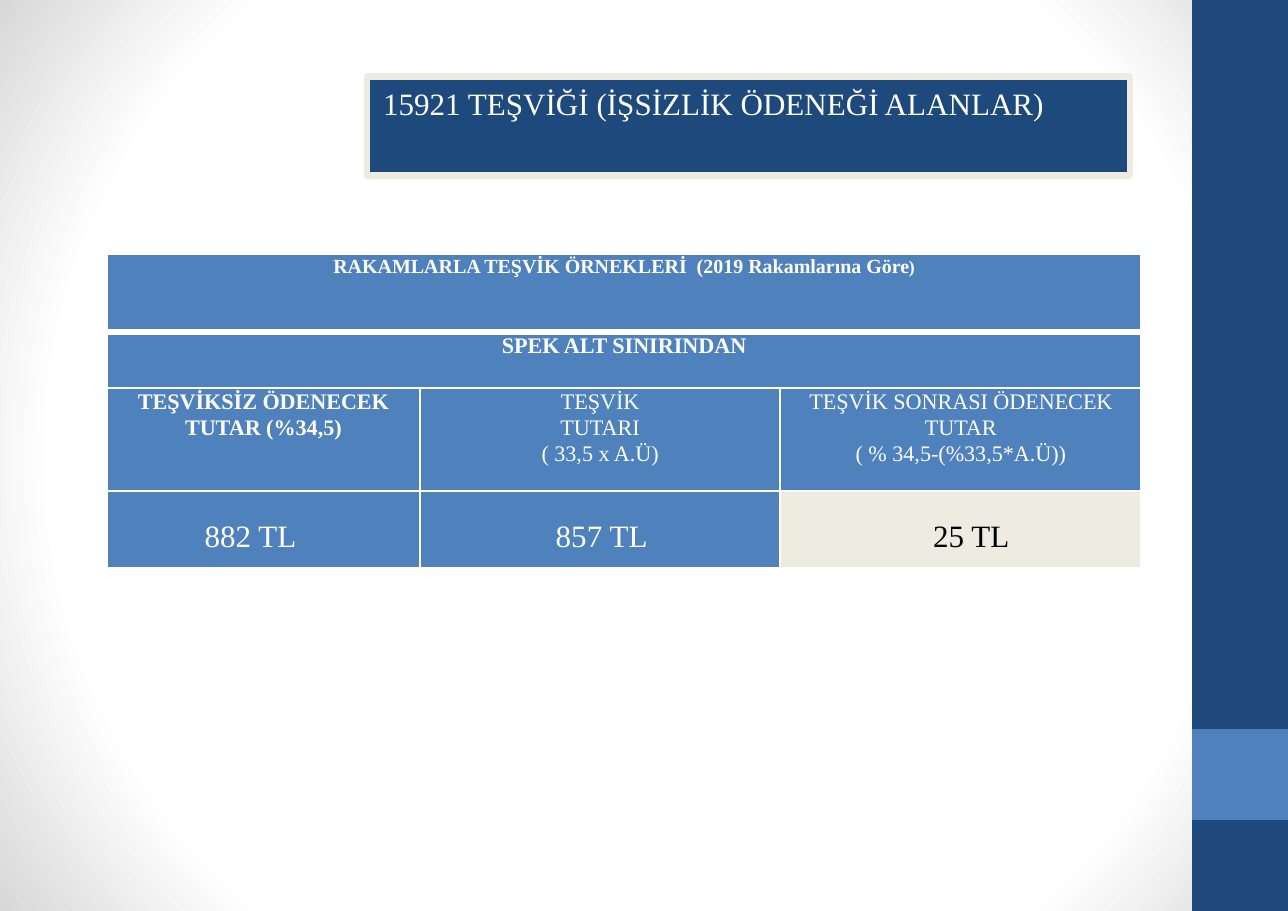
import pptx
import pptx.dml.color
import pptx.enum.shapes
import pptx.enum.text
import pptx.oxml
import pptx.util

Inches = pptx.util.Inches
ALIGN = pptx.enum.text.PP_ALIGN
RECTANGLE = pptx.enum.shapes.MSO_SHAPE.RECTANGLE
DRAWING_NS = 'xmlns:a="http://schemas.openxmlformats.org/drawingml/2006/main"'
NAVY, BLUE, CREAM, WHITE, BLACK = "1F497D", "4F81BD", "EEECE1", "FFFFFF", "000000"


def color(hex_text):
    return pptx.dml.color.RGBColor.from_string(hex_text)


def style_text(frame, size, hex_text, bold=False, align=ALIGN.CENTER, spacing=1.07):
    for para in frame.paragraphs:
        para.alignment = align
        para.line_spacing = spacing
        for span in para.runs:
            span.font.name = "Times New Roman"
            span.font.size = pptx.util.Pt(size)
            span.font.bold = bold
            span.font.color.rgb = color(hex_text)


deck = pptx.Presentation()
deck.slide_width, deck.slide_height = Inches(8.07), Inches(5.71)
page = deck.slides.add_slide(deck.slide_layouts[5])

# Background: white centre fading to grey corners
background = page.background.fill
background.gradient()
gradient = page.background._cSld.bg.bgPr.find(pptx.oxml.ns.qn("a:gradFill"))
for child in list(gradient):
    gradient.remove(child)
stops = "".join(
    f'<a:gs pos="{position * 1000}"><a:srgbClr val="{shade}"/></a:gs>'
    for position, shade in [(0, WHITE), (75, WHITE), (100, "D8D8D8")])
center = "".join(f' {side}="50000"' for side in "ltrb")
for xml in [f"<a:gsLst {DRAWING_NS}>{stops}</a:gsLst>",
            f'<a:path {DRAWING_NS} path="circle"><a:fillToRect{center}/></a:path>']:
    gradient.append(pptx.oxml.parse_xml(xml))

# Side band and its accent
for top, height, shade in [(0, 5.71, NAVY), (4.57, 0.57, BLUE)]:
    band = page.shapes.add_shape(
        RECTANGLE, Inches(7.47), Inches(top), Inches(0.6), Inches(height))
    band.shadow.inherit = False
    band.fill.solid()
    band.fill.fore_color.rgb = color(shade)
    band.line.fill.background()

# Title
title = page.shapes.title
title.left, title.top = Inches(2.3), Inches(0.48)
title.width, title.height = Inches(4.78), Inches(0.62)
title.fill.solid()
title.fill.fore_color.rgb = color("1D497D")
title.line.color.rgb = color("EEECE0")
title.line.width = pptx.util.Pt(3)
title.text_frame.text = "15921 TEŞVİĞİ (İŞSİZLİK ÖDENEĞİ ALANLAR)"
title.text_frame.auto_size = pptx.enum.text.MSO_AUTO_SIZE.NONE
title.text_frame.vertical_anchor = pptx.enum.text.MSO_ANCHOR.TOP
style_text(title.text_frame, 14, WHITE, align=ALIGN.LEFT, spacing=1.0)

# Incentive table: rows of (height, size, texts)
rows = [
    (0.49, 9, ["RAKAMLARLA TEŞVİK ÖRNEKLERİ  (2019 Rakamlarına Göre"]),
    (0.35, 10, ["SPEK ALT SINIRINDAN"]),
    (0.65, 10, ["TEŞVİKSİZ ÖDENECEK TUTAR (%34,5)",
                "TEŞVİK\nTUTARI\n( 33,5 x A.Ü)",
                "TEŞVİK SONRASI ÖDENECEK TUTAR\n( % 34,5-(%33,5*A.Ü))"]),
    (0.48, 10, []),
]
widths = [1.96, 2.26, 2.26]
table = page.shapes.add_table(
    len(rows), len(widths), Inches(0.67), Inches(1.59), Inches(6.48), Inches(1.97)).table
for column, width in zip(table.columns, widths):
    column.width = Inches(width)
for row_index, (height, size, texts) in enumerate(rows):
    table.rows[row_index].height = Inches(height)
    for column_index in range(len(widths)):
        cell = table.cell(row_index, column_index)
        cell.margin_left = cell.margin_right = Inches(0.04)
        cell.margin_top = cell.margin_bottom = 0
        properties = cell._tc.get_or_add_tcPr()
        for side in "LRTB":
            heavy = (row_index, side) in [(0, "B"), (1, "T")]
            properties.append(pptx.oxml.parse_xml(
                f'<a:ln{side} {DRAWING_NS} w="{38100 if heavy else 12700}"><a:solidFill>'
                f'<a:srgbClr val="{WHITE}"/></a:solidFill></a:ln{side}>'))
        cell.fill.solid()
        cell.fill.fore_color.rgb = color(CREAM if (row_index, column_index) == (3, 2) else BLUE)
        if column_index < len(texts):
            cell.text_frame.text = texts[column_index]
            style_text(cell.text_frame, size, WHITE, bold=column_index == 0)
    if len(texts) == 1:
        table.cell(row_index, 0).merge(table.cell(row_index, len(widths) - 1))

# Smaller closing bracket of the table heading
heading = table.cell(0, 0).text_frame
heading.paragraphs[0].add_run().text = ")"
style_text(heading, 9, WHITE, bold=True)
heading.paragraphs[0].runs[-1].font.size = pptx.util.Pt(8)

# Amounts over the last row
for left, width, amount, shade in [(1.18, 0.78, "882 TL", WHITE),
                                   (3.38, 0.78, "857 TL", WHITE),
                                   (5.74, 0.69, "25 TL", BLACK)]:
    box = page.shapes.add_textbox(Inches(left), Inches(3.17), Inches(width), Inches(0.35))
    box.text_frame.word_wrap = False
    box.text_frame.text = amount
    style_text(box.text_frame, 14, shade)

deck.save("out.pptx")
